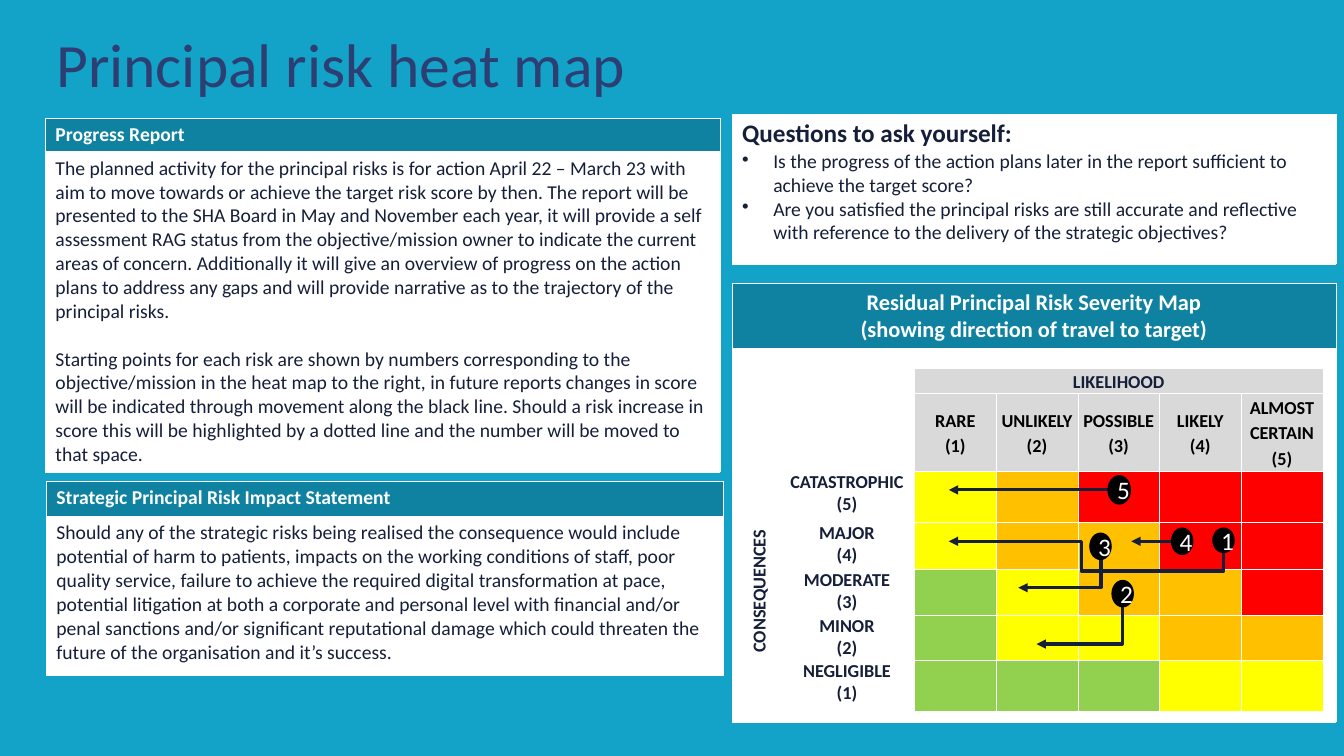
from dataclasses import dataclass

from lxml.etree import SubElement
from pptx import Presentation
from pptx.dml.color import RGBColor
from pptx.enum.shapes import MSO_CONNECTOR, MSO_SHAPE
from pptx.enum.text import MSO_ANCHOR, PP_ALIGN
from pptx.oxml.ns import qn
from pptx.util import Emu, Pt

PX = 9144  # 100 px to the inch


@dataclass(frozen=True)
class Theme:
    font: str = "Calibri"
    page: str = "13A3C9"
    header: str = "0F82A1"
    title: str = "2C3E72"
    ink: str = "161F39"
    white: str = "FFFFFF"
    black: str = "000000"
    grey: str = "D9D9D9"
    green: str = "92D050"
    yellow: str = "FFFF00"
    amber: str = "FFC000"
    red: str = "FF0000"
    title_size: int = 44
    lead_size: int = 18
    map_title_size: int = 16
    body_size: int = 14
    grid_size: int = 13


THEME = Theme()
RATINGS = {"G": THEME.green, "Y": THEME.yellow, "A": THEME.amber, "R": THEME.red}

PROGRESS = [
    "The planned activity for the principal risks is for action April 22 – March 23 with aim to move towards or achieve the target risk score by then. The report will be presented to the SHA Board in May and November each year, it will provide a self assessment RAG status from the objective/mission owner to indicate the current areas of concern. Additionally it will give an overview of progress on the action plans to address any gaps and will provide narrative as to the trajectory of the principal risks.",
    "Starting points for each risk are shown by numbers corresponding to the objective/mission in the heat map to the right, in future reports changes in score will be indicated through movement along the black line. Should a risk increase in score this will be highlighted by a dotted line and the number will be moved to that space.",
]
IMPACT = [
    "Should any of the strategic risks being realised the consequence would include potential of harm to patients, impacts on the working conditions of staff, poor quality service, failure to achieve the required digital transformation at pace, potential litigation at both a corporate and personal level with financial and/or penal sanctions and/or significant reputational damage which could threaten the future of the organisation and it’s success.",
]
QUESTIONS = [
    "Is the progress of the action plans later in the report sufficient to achieve the target score?",
    "Are you satisfied the principal risks are still accurate and reflective with reference to the delivery of the strategic objectives?",
]
LIKELIHOODS = ["RARE", "UNLIKELY", "POSSIBLE", "LIKELY", "ALMOST CERTAIN"]
# Consequence, most severe first, with its rating under each likelihood
CONSEQUENCES = [
    ("CATASTROPHIC", "YARRR"),
    ("MAJOR", "YAARR"),
    ("MODERATE", "GYAAR"),
    ("MINOR", "GYYAA"),
    ("NEGLIGIBLE", "GGGYY"),
]
MARKERS = [
    ("1", 1203, 524, 21, 24),
    ("2", 1103, 576, 21, 26),
    ("3", 1081, 529, 21, 26),
    ("4", 1162, 524, 21, 26),
    ("5", 1099, 472, 22, 28),
]


def px(value):
    return Emu(round(value * PX))


def rgb(colour):
    return RGBColor.from_string(colour)


def add_para(frame, lines, size, colour, bold=False, align=PP_ALIGN.LEFT):
    """Add a paragraph of one run per line, filling the empty first paragraph."""
    first = frame.paragraphs[0]
    para = frame.add_paragraph() if first.runs else first
    para.alignment = align
    for index, line in enumerate(lines):
        if index:
            para.add_line_break()
        span = para.add_run()
        span.text = line
        span.font.name = THEME.font
        span.font.size = Pt(size)
        span.font.bold = bold
        span.font.color.rgb = rgb(colour)
    return para


def add_bullet(para):
    properties = para._p.get_or_add_pPr()
    properties.set("marL", str(px(31)))
    properties.set("indent", str(px(-31)))
    SubElement(properties, qn("a:buChar"), char="•")


def style_cell(cell, fill=None, top=0.25, bottom=0.25):
    """Give the cell white borders (widths in points) and a fill, if any."""
    properties = cell._tc.get_or_add_tcPr()
    for side, width in (("L", 0.25), ("R", 0.25), ("T", top), ("B", bottom)):
        line = SubElement(properties, qn(f"a:ln{side}"), w=str(Pt(width)))
        solid = SubElement(line, qn("a:solidFill"))
        SubElement(solid, qn("a:srgbClr"), val=THEME.white)
    if fill:
        cell.fill.solid()
        cell.fill.fore_color.rgb = rgb(fill)
    else:
        cell.fill.background()


def add_grid(page, left, top, widths, heights):
    table = page.shapes.add_table(
        len(heights), len(widths), px(left), px(top), px(sum(widths)), px(sum(heights))
    ).table
    table.first_row = table.horz_banding = False
    for column, width in zip(table.columns, widths):
        column.width = px(width)
    for row, height in zip(table.rows, heights):
        row.height = px(height)
    return table


def add_panel(page, left, top, width, heights, heading, paragraphs):
    table = add_grid(page, left, top, [width], heights)
    header, body = table.cell(0, 0), table.cell(1, 0)
    style_cell(header, THEME.header)
    style_cell(body, THEME.white)
    add_para(header.text_frame, [heading], THEME.body_size, THEME.white, bold=True)
    for index, words in enumerate(paragraphs):
        para = add_para(body.text_frame, [words], THEME.body_size, THEME.ink)
        if index:
            para.space_before = Pt(17)


def add_questions(page):
    cell = add_grid(page, 726, 113, [599], [149]).cell(0, 0)
    style_cell(cell, THEME.white)
    add_para(cell.text_frame, ["Questions to ask yourself:"], THEME.lead_size, THEME.ink, bold=True)
    for question in QUESTIONS:
        add_bullet(add_para(cell.text_frame, [question], THEME.body_size, THEME.ink))


def add_map_frame(page):
    table = add_grid(page, 726, 281, [599], [66, 369])
    header = table.cell(0, 0)
    style_cell(header, THEME.header, bottom=3)
    style_cell(table.cell(1, 0), THEME.white, top=1)
    header.vertical_anchor = MSO_ANCHOR.MIDDLE
    for line in ("Residual Principal Risk Severity Map", "(showing direction of travel to target)"):
        add_para(header.text_frame, [line], THEME.map_title_size, THEME.white, True, PP_ALIGN.CENTER)


def label_cell(cell, lines, colour=THEME.ink, spacing=1.0):
    cell.margin_left = cell.margin_right = px(5)
    cell.margin_top = cell.margin_bottom = 0
    para = add_para(cell.text_frame, lines, THEME.grid_size, colour, True, PP_ALIGN.CENTER)
    para.line_spacing = spacing


def add_heat_map(page):
    table = add_grid(page, 739, 365, [34, 134] + [81] * 5, [25, 77, 51, 47, 45, 45, 51])
    for row in range(7):
        for column in range(7):
            if row < 2:
                fill = THEME.white if column < 2 else THEME.grey
            else:
                fill = RATINGS[CONSEQUENCES[row - 2][1][column - 2]] if column > 1 else None
            style_cell(table.cell(row, column), fill)
    table.cell(0, 0).merge(table.cell(1, 1))
    table.cell(0, 2).merge(table.cell(0, 6))
    table.cell(2, 0).merge(table.cell(6, 0))
    label_cell(table.cell(0, 2), ["LIKELIHOOD"], spacing=1.15)
    label_cell(table.cell(2, 0), ["CONSEQUENCES"], spacing=1.15)
    table.cell(2, 0)._tc.get_or_add_tcPr().set("vert", "vert270")
    for index, name in enumerate(LIKELIHOODS):
        cell = table.cell(1, index + 2)
        cell.vertical_anchor = MSO_ANCHOR.MIDDLE
        label_cell(cell, [name, f"({index + 1})"], THEME.black, 1.15)
    for index, (name, _) in enumerate(CONSEQUENCES):
        label_cell(table.cell(index + 2, 1), [name, f"({5 - index})"])


def add_arrow(page, kind, begin_x, begin_y, end_x, end_y):
    arrow = page.shapes.add_connector(kind, px(begin_x), px(begin_y), px(end_x), px(end_y))
    arrow.line.color.rgb = rgb(THEME.ink)
    arrow.line.width = Pt(2.25)
    properties = arrow._element.spPr
    SubElement(properties.find(qn("a:ln")), qn("a:tailEnd"), type="triangle")
    SubElement(properties, qn("a:effectLst"))
    return arrow


def add_bent_arrow(page, start, end, preset, adjustments=()):
    """Add an elbow that leaves its start vertically: its frame is turned by 90 degrees."""
    (x1, y1), (x2, y2) = start, end
    middle_x, middle_y = (x1 + x2) / 2, (y1 + y2) / 2
    half_x, half_y = (x2 - x1) / 2, (y2 - y1) / 2
    arrow = add_arrow(page, MSO_CONNECTOR.ELBOW, middle_x - half_y, middle_y + half_x,
                      middle_x + half_y, middle_y - half_x)
    properties = arrow._element.spPr
    properties.find(qn("a:xfrm")).set("rot", "5400000")
    geometry = properties.find(qn("a:prstGeom"))
    geometry.set("prst", preset)
    guides = geometry.find(qn("a:avLst"))
    for number, value in enumerate(adjustments, 1):
        SubElement(guides, qn("a:gd"), name=f"adj{number}", fmla=f"val {value}")


def add_marker(page, number, left, top, width, height):
    marker = page.shapes.add_shape(
        MSO_SHAPE.FLOWCHART_CONNECTOR, px(left), px(top), px(width), px(height))
    marker.shadow.inherit = False
    marker.fill.solid()
    marker.fill.fore_color.rgb = rgb(THEME.black)
    marker.line.color.rgb = rgb(THEME.black)
    marker.line.width = Pt(1)
    marker.text_frame.vertical_anchor = MSO_ANCHOR.MIDDLE
    add_para(marker.text_frame, [number], THEME.lead_size, THEME.white, align=PP_ALIGN.CENTER)


def add_title(page):
    box = page.shapes.add_textbox(px(46), px(29), px(1150), px(80))
    box.text_frame.word_wrap = True
    para = add_para(box.text_frame, ["Principal risk heat map"], THEME.title_size, THEME.title)
    para.line_spacing = 0.9


def main():
    deck = Presentation()
    deck.slide_width, deck.slide_height = px(1333), px(750)
    page = deck.slides.add_slide(deck.slide_layouts[6])
    page.background.fill.solid()
    page.background.fill.fore_color.rgb = rgb(THEME.page)
    add_title(page)
    add_panel(page, 45, 117, 669, [33, 318], "Progress Report", PROGRESS)
    add_panel(page, 46, 477, 671, [35, 158], "Strategic Principal Risk Impact Statement", IMPACT)
    add_questions(page)
    add_map_frame(page)
    add_heat_map(page)
    add_bent_arrow(page, (1214, 548), (941, 537), "bentConnector4", (-168100, 51900))
    add_bent_arrow(page, (1113, 602), (1028, 639), "bentConnector2")
    add_bent_arrow(page, (1092, 554), (1010, 583), "bentConnector2")
    add_arrow(page, MSO_CONNECTOR.STRAIGHT, 1162, 537, 1122, 537)
    add_arrow(page, MSO_CONNECTOR.STRAIGHT, 1099, 486, 941, 486)
    for marker in MARKERS:
        add_marker(page, *marker)
    deck.save("out.pptx")


if __name__ == "__main__":
    main()
